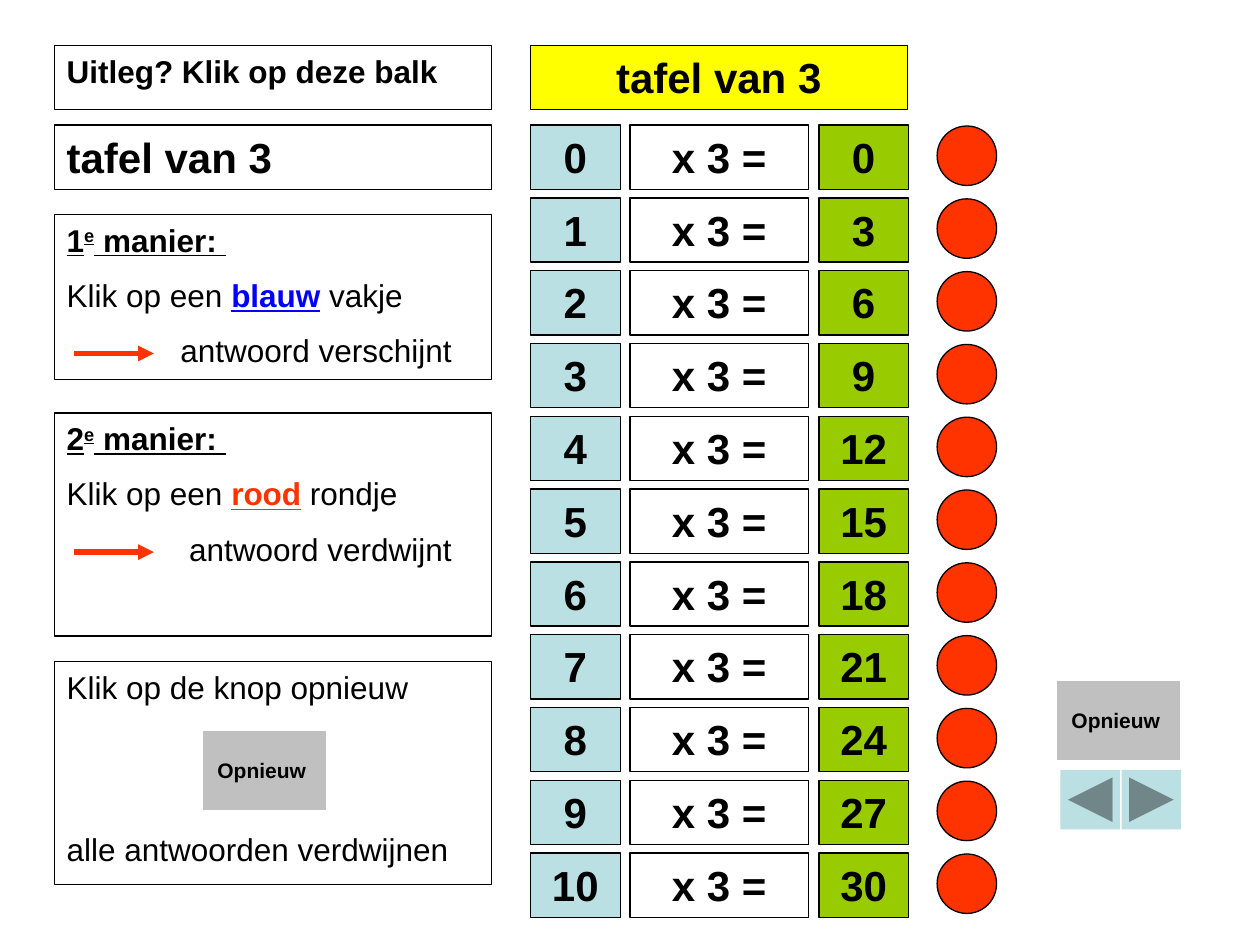
"""Build a practice slide for the three times table."""
import pptx
import pptx.util
import pptx.dml.color
import pptx.enum.shapes
import pptx.enum.text
import pptx.oxml.ns
import lxml.etree

Pt = pptx.util.Pt
RGB = pptx.dml.color.RGBColor
KIND = pptx.enum.shapes.MSO_SHAPE
ALIGN = pptx.enum.text.PP_ALIGN
ANCHOR = pptx.enum.text.MSO_ANCHOR

BLACK = RGB(0, 0, 0)
WHITE = RGB(255, 255, 255)
YELLOW = RGB(255, 255, 0)
GREEN = RGB(0x99, 0xCC, 0)
PALE = RGB(0xBB, 0xE0, 0xE3)
RED = RGB(0xFF, 0x33, 0)
BLUE = RGB(0, 0, 255)
GRAY = RGB(0xC0, 0xC0, 0xC0)

FACTOR = 3
TITLE = f"tafel van {FACTOR}"
AGAIN = "Opnieuw "
BARS = [("Uitleg? Klik op deze balk", 26, 18), (TITLE, 71.5, 24)]
WAYS = [
    ("1", "blauw", BLUE, " vakje", "antwoord verschijnt", 65, 122.5, 94.5),
    ("2", "rood", RED, " rondje", "antwoord verdwijnt", 70, 236, 127.5),
]
RESET = ["Klik op de knop opnieuw", "alle antwoorden verdwijnen"]
BUTTONS = [(116, 417.5), (604, 389)]
MOVES = [
    (KIND.ACTION_BUTTON_BACK_OR_PREVIOUS, 606),
    (KIND.ACTION_BUTTON_FORWARD_OR_NEXT, 641),
]

LEFT, WIDE, HIGH = 31, 250, 36.75
TOP, STEP = 71.5, 41.6
DOT = 34


def paint(shape, fill, edge=True):
    if fill is None:
        shape.fill.background()
    else:
        shape.fill.solid()
        shape.fill.fore_color.rgb = fill
    if edge:
        shape.line.color.rgb = BLACK
        shape.line.width = Pt(0.75)
    else:
        shape.line.fill.background()


def draw(kind, x, y, w, h, fill=None, edge=True):
    shape = slide.shapes.add_shape(kind, Pt(x), Pt(y), Pt(w), Pt(h))
    shape.shadow.inherit = False
    paint(shape, fill, edge)
    shape.text_frame.vertical_anchor = ANCHOR.TOP
    return shape


def style(para, size, bold=False, align=ALIGN.LEFT, before=0):
    para.alignment = align
    para.space_before = Pt(before)
    font = para.font
    font.name, font.size, font.bold = "Arial", Pt(size), bold
    font.color.rgb = BLACK


def write(shape, text, size, bold=True, align=ALIGN.CENTER):
    para = shape.text_frame.paragraphs[0]
    para.text = text
    style(para, size, bold, align)


def add_para(shape, before=10):
    para = shape.text_frame.add_paragraph()
    style(para, 18, before=before)
    return para


def add_run(para, text, mark=False, color=None):
    run = para.add_run()
    run.text = text
    if mark:
        run.font.bold = run.font.underline = True
    if color is not None:
        run.font.color.rgb = color
    return run


def add_arrow(y):
    line = slide.shapes.add_connector(
        pptx.enum.shapes.MSO_CONNECTOR.STRAIGHT, Pt(42.5), Pt(y), Pt(88), Pt(y))
    line.line.color.rgb = RED
    line.line.width = Pt(3)
    tag = pptx.oxml.ns.qn
    lxml.etree.SubElement(line.line._get_or_add_ln(), tag("a:tailEnd"), type="triangle")
    lxml.etree.SubElement(line._element.spPr, tag("a:effectLst"))


def add_title():
    title = slide.shapes.title
    title.left, title.top, title.width, title.height = Pt(303), Pt(26), Pt(215.5), Pt(HIGH)
    paint(title, YELLOW)
    write(title, TITLE, 24)
    title.text_frame.vertical_anchor = ANCHOR.TOP
    title.text_frame.auto_size = pptx.enum.text.MSO_AUTO_SIZE.NONE


def add_table_rows():
    for num in range(11):
        y = TOP + num * STEP
        cells = [
            (str(num), 303, 51.5, PALE),
            (f"x {FACTOR} =", 360, 102, WHITE),
            (str(num * FACTOR), 468, 51, GREEN),
        ]
        for text, x, w, fill in cells:
            write(draw(KIND.RECTANGLE, x, y, w, HIGH, fill), text, 24)
        draw(KIND.OVAL, 535.5, y + 0.5, DOT, DOT, RED)


def add_way(num, word, color, thing, result, indent, y, h):
    box = draw(KIND.RECTANGLE, LEFT, y, WIDE, h)
    head = box.text_frame.paragraphs[0]
    style(head, 18)
    add_run(head, num, True)
    add_run(head, "e", True)._r.get_or_add_rPr().set("baseline", "30000")
    add_run(head, " manier: ", True)
    click = add_para(box)
    add_run(click, "Klik op een ")
    add_run(click, word, True, color)
    add_run(click, thing)
    last = add_para(box)
    last.text = result
    last._p.get_or_add_pPr().set("marL", str(Pt(indent)))
    add_arrow(y + 79.5)


def add_reset():
    box = draw(KIND.RECTANGLE, LEFT, 378, WIDE, 127.5)
    write(box, RESET[0], 18, False, ALIGN.LEFT)
    add_para(box, 71).text = RESET[1]


def add_buttons():
    for x, y in BUTTONS:
        knob = draw(KIND.ACTION_BUTTON_CUSTOM, x, y, 70.5, 45.5, GRAY, False)
        write(knob, AGAIN, 12)
        knob.text_frame.vertical_anchor = ANCHOR.MIDDLE
        knob.text_frame.word_wrap = False
    for kind, x in MOVES:
        draw(kind, x, 440, DOT, DOT, PALE, False)


deck = pptx.Presentation()
deck.slide_width, deck.slide_height = Pt(720), Pt(540)
slide = deck.slides.add_slide(deck.slide_layouts[5])

add_title()
add_table_rows()
for text, y, size in BARS:
    write(draw(KIND.RECTANGLE, LEFT, y, WIDE, HIGH), text, size, align=ALIGN.LEFT)
for way in WAYS:
    add_way(*way)
add_reset()
add_buttons()
deck.save("out.pptx")
